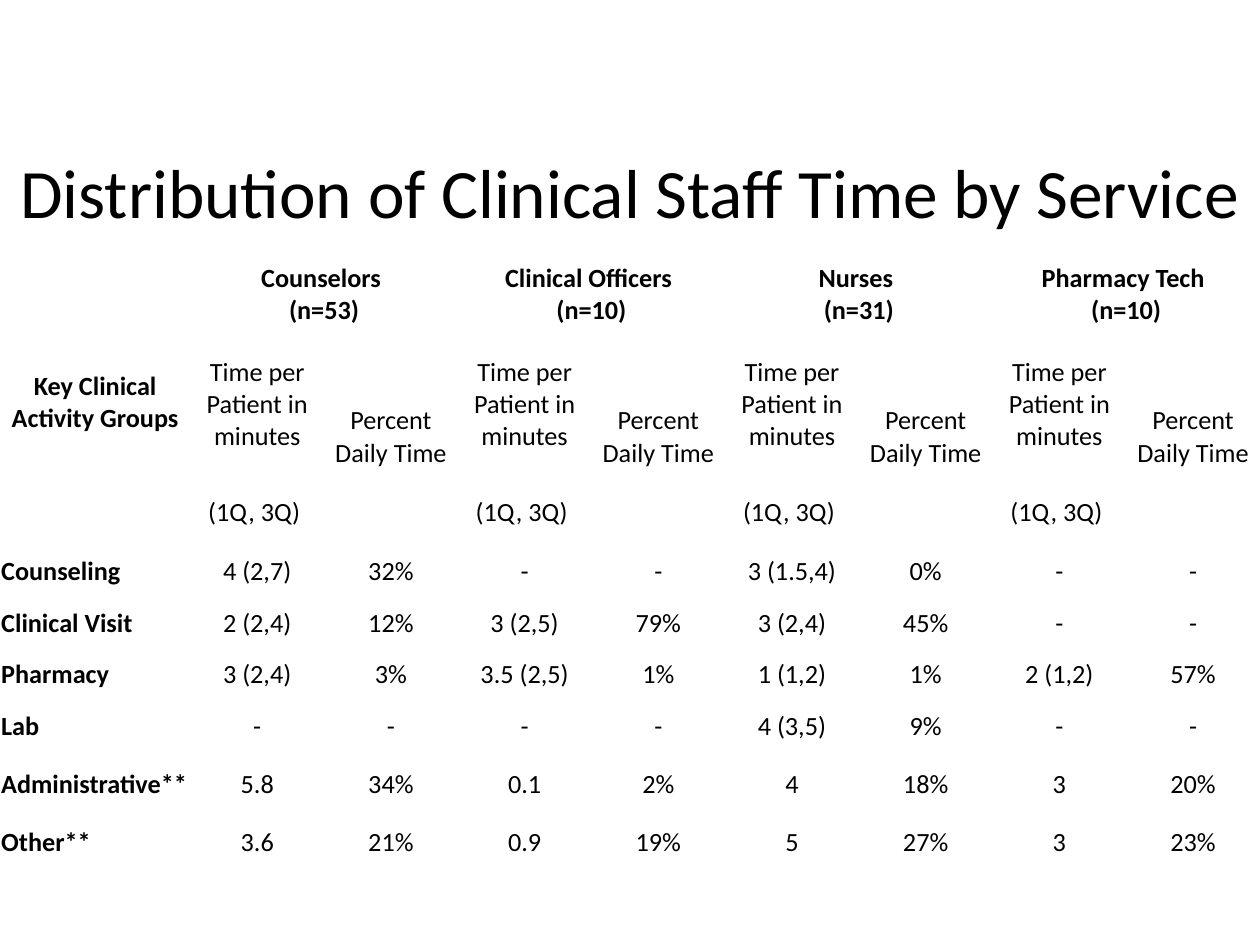
from lxml.etree import SubElement
from pptx import Presentation
from pptx.dml.color import RGBColor
from pptx.enum.text import MSO_ANCHOR, PP_ALIGN
from pptx.oxml.ns import qn
from pptx.util import Pt

FONT = "Calibri"
BLACK = "000000"
WHITE = "FFFFFF"

LABEL_WIDTH, VALUE_WIDTH = 108.8, 76.4
ROW_HEIGHTS = [39, 86.4, 36.7, 29.6, 29.6, 29.6, 29.6, 36.7, 29.6]

STAFF_GROUPS = [
    "Counselors \v(n=53)",
    "Clinical Officers \n(n=10)",
    "Nurses \v(n=31)",
    "Pharmacy Tech \n(n=10)",
]
ACTIVITIES = [
    ["Counseling", "4 (2,7)", "32%", "-", "-", "3 (1.5,4)", "0%", "-", "-"],
    ["Clinical Visit", "2 (2,4)", "12%", "3 (2,5)", "79%", "3 (2,4)", "45%", "-", "-"],
    ["Pharmacy", "3 (2,4)", "3%", "3.5 (2,5)", "1%", "1 (1,2)", "1%", "2 (1,2)", "57%"],
    ["Lab", "-", "-", "-", "-", "4 (3,5)", "9%", "-", "-"],
    ["Administrative** ", "5.8", "34%", "0.1", "2%", "4", "18%", "3", "20%"],
    ["Other**", "3.6", "21%", "0.9", "19%", "5", "27%", "3", "23%"],
]


def color(hex_string):
    return RGBColor.from_string(hex_string)


def format_text(frame, size, align, bold=False):
    for paragraph in frame.paragraphs:
        paragraph.alignment = align
        for run in paragraph.runs:
            run.font.name = FONT
            run.font.size = Pt(size)
            run.font.bold = bold
            run.font.color.rgb = color(BLACK)


def set_borders(cell, bottom_width):
    properties = cell._tc.get_or_add_tcPr()
    for side, width in (("L", 1), ("R", 1), ("T", 1), ("B", bottom_width)):
        line = SubElement(properties, qn(f"a:ln{side}"), w=str(Pt(width)))
        fill = SubElement(line, qn("a:solidFill"))
        SubElement(fill, qn("a:srgbClr"), val=WHITE)


def style_cell(cell, bottom_width=1):
    cell.margin_left = cell.margin_right = cell.margin_top = Pt(0.7)
    cell.margin_bottom = Pt(0)
    cell.vertical_anchor = MSO_ANCHOR.MIDDLE
    set_borders(cell, bottom_width)
    cell.fill.background()


def write_cell(cell, text, bold=False, align=PP_ALIGN.CENTER):
    cell.text_frame.text = text
    format_text(cell.text_frame, 15, align, bold)


def add_title(slide, text):
    title = slide.shapes.title
    title.left, title.top = Pt(0), Pt(70)
    title.width, title.height = Pt(720), Pt(78.5)
    title.text_frame.text = text
    title.text_frame.vertical_anchor = MSO_ANCHOR.MIDDLE
    format_text(title.text_frame, 39.6, PP_ALIGN.CENTER)


def add_time_table(slide):
    frame = slide.shapes.add_table(
        len(ROW_HEIGHTS), 9, Pt(0), Pt(148.5), Pt(720), Pt(sum(ROW_HEIGHTS)))
    table = frame.table
    table.first_row = table.horz_banding = False
    for index, column in enumerate(table.columns):
        column.width = Pt(VALUE_WIDTH if index else LABEL_WIDTH)
    for row, height in zip(table.rows, ROW_HEIGHTS):
        row.height = Pt(height)
        for cell in row.cells:
            style_cell(cell)
    return table


def fill_header(table):
    key_groups = table.cell(0, 0)
    key_groups.merge(table.cell(2, 0))
    write_cell(key_groups, "Key Clinical Activity Groups", bold=True)

    # Each staff group spans a time column and a percent column
    for index, group in enumerate(STAFF_GROUPS):
        time, percent = 2 * index + 1, 2 * index + 2
        table.cell(0, time).merge(table.cell(0, percent))
        write_cell(table.cell(0, time), group, bold=True)
        write_cell(table.cell(1, time), "Time per Patient in minutes")
        write_cell(table.cell(2, time), "(1Q, 3Q) ")
        table.cell(1, percent).merge(table.cell(2, percent))
        write_cell(table.cell(1, percent), "Percent Daily Time")

    # Heavier rule under the top header cells
    for column in range(9):
        rule = table.cell(0, column)._tc.tcPr.find(qn("a:lnB"))
        rule.set("w", str(Pt(3)))


def fill_activities(table):
    for row, (activity, *values) in enumerate(ACTIVITIES, start=3):
        write_cell(table.cell(row, 0), activity, bold=True, align=PP_ALIGN.LEFT)
        for column, value in enumerate(values, start=1):
            write_cell(table.cell(row, column), value)


def main():
    presentation = Presentation()
    presentation.slide_width, presentation.slide_height = Pt(720), Pt(540)
    slide = presentation.slides.add_slide(presentation.slide_layouts[5])

    # Title
    add_title(slide, "Distribution of Clinical Staff Time by Service")

    # Staff time by activity
    time_table = add_time_table(slide)
    fill_header(time_table)
    fill_activities(time_table)

    presentation.save("out.pptx")


if __name__ == "__main__":
    main()
